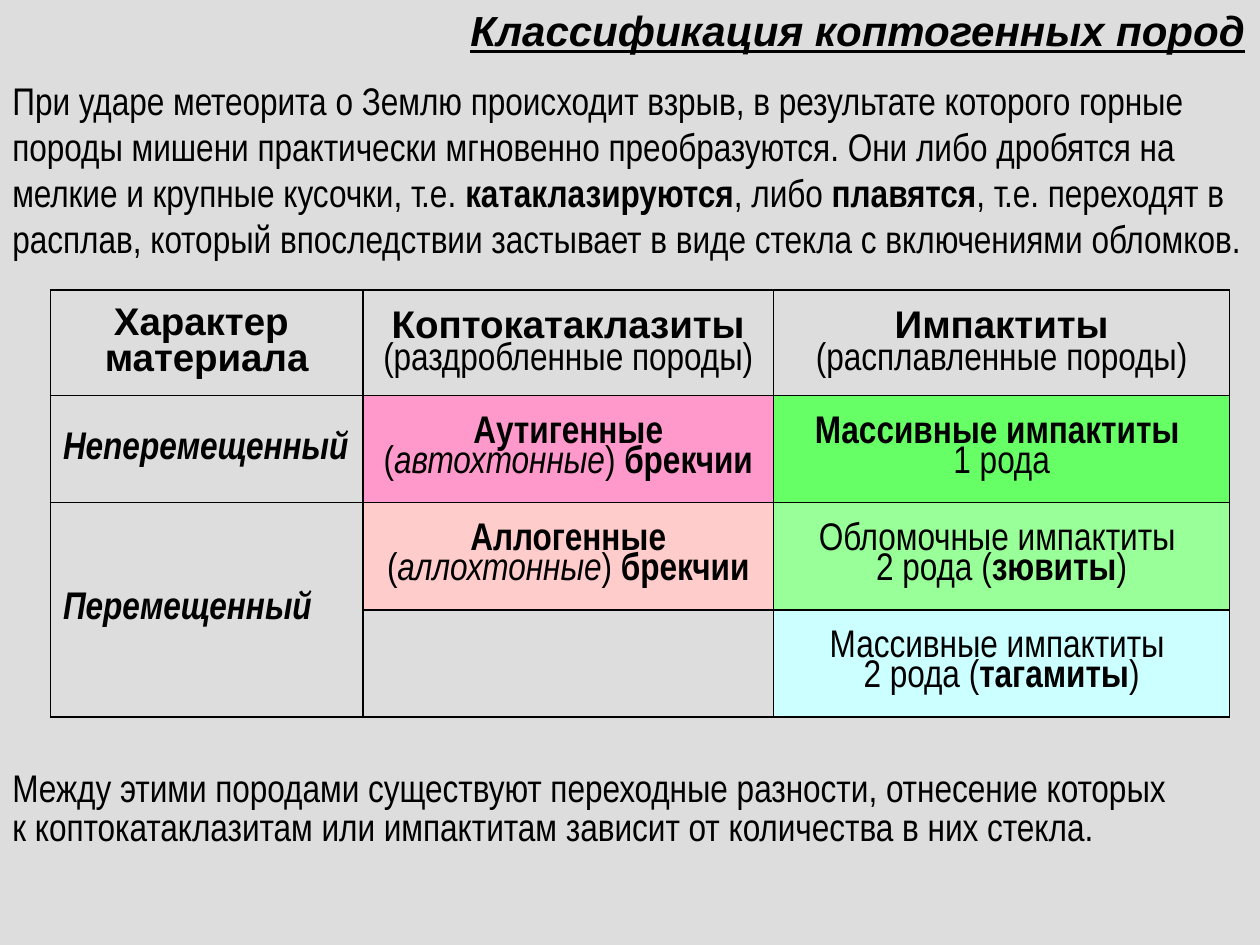
import pptx
import pptx.util
import pptx.dml.color
import pptx.enum.text
import pptx.oxml
import pptx.oxml.ns
from dataclasses import dataclass

Inches, Pt = pptx.util.Inches, pptx.util.Pt
Align = pptx.enum.text.PP_ALIGN
Anchor = pptx.enum.text.MSO_ANCHOR


@dataclass
class Theme:
    back: str = "DDDDDD"
    ink: str = "000000"
    pink: str = "FF99CC"
    rose: str = "FFCCCC"
    green: str = "66FF66"
    mint: str = "99FF99"
    aqua: str = "CCFFFF"
    head: str = "Arial"
    body: str = "Arial Narrow"
    title: int = 24
    size: int = 22
    tight: float = 0.85
    rule: int = 1


def color(code):
    return pptx.dml.color.RGBColor.from_string(code)


class Page:
    def __init__(self, deck, theme):
        self.theme = theme
        self.slide = deck.slides.add_slide(deck.slide_layouts[6])
        fill = self.slide.background.fill
        fill.solid()
        fill.fore_color.rgb = color(theme.back)

    def words(self, frame, paras, size, align=Align.LEFT, tight=None):
        """Each run is (text, marks): b bold, i italic, u underline, h heading font."""
        for i, runs in enumerate(paras):
            para = frame.add_paragraph() if i else frame.paragraphs[0]
            para.alignment = align
            if tight:
                para.line_spacing = tight
            for text, marks in runs:
                run = para.add_run()
                run.text = text
                font = run.font
                font.name = self.theme.head if "h" in marks else self.theme.body
                font.size = Pt(size)
                font.bold = "b" in marks
                font.italic = "i" in marks
                font.underline = "u" in marks
                font.color.rgb = color(self.theme.ink)

    def text(self, box, paras, size, align=Align.LEFT, tight=None):
        shape = self.slide.shapes.add_textbox(*map(Inches, box))
        frame = shape.text_frame
        frame.word_wrap = True
        self.words(frame, paras, size, align, tight)
        return frame

    def border(self, cell):
        props = cell._tc.get_or_add_tcPr()
        for side in "LRTB":
            props.append(pptx.oxml.parse_xml(
                f'<a:ln{side} {pptx.oxml.ns.nsdecls("a")} w="{Pt(self.theme.rule)}">'
                f'<a:solidFill><a:srgbClr val="{self.theme.ink}"/></a:solidFill>'
                f'</a:ln{side}>'))

    def table(self, left, top, wides, highs, rows):
        grid = self.slide.shapes.add_table(
            len(highs), len(wides), Inches(left), Inches(top),
            Inches(sum(wides)), Inches(sum(highs))).table
        grid.first_row = grid.horz_banding = False
        for col, wide in zip(grid.columns, wides):
            col.width = Inches(wide)
        for row, high, items in zip(grid.rows, highs, rows):
            row.height = Inches(high)
            for n, (cell, (paras, tint)) in enumerate(zip(row.cells, items)):
                self.border(cell)
                if tint:
                    cell.fill.solid()
                    cell.fill.fore_color.rgb = color(tint)
                else:
                    cell.fill.background()
                cell.vertical_anchor = Anchor.MIDDLE
                label = n == 0 and len(paras) == 1
                self.words(cell.text_frame, paras, self.theme.size,
                           Align.LEFT if label else Align.CENTER,
                           None if label else self.theme.tight)
        return grid


def breccia(kind, origin):
    return [[(kind, "b"), (" (", ""), (origin, "i"), (") ", ""), ("брекчии", "b")]]


def second(kind, name):
    return [[(kind + " импактиты ", "")],
            [("2 рода (", ""), (name, "b"), (")", "")]]


def main():
    deck = pptx.Presentation()
    deck.slide_width, deck.slide_height = Inches(10), Inches(7.5)
    theme = Theme()
    page = Page(deck, theme)

    # Title
    frame = page.text((0, 0.09, 9.98, 0.36),
                      [[("Классификация коптогенных пород", "biuh")]],
                      theme.title, Align.RIGHT, theme.tight)
    frame.margin_top = frame.margin_bottom = Inches(0.01)
    frame.vertical_anchor = Anchor.MIDDLE

    # Classification table
    rows = [
        [([[("Характер ", "bh")], [("материала", "bh")]], None),
         ([[("Коптокатаклазиты", "bh")], [("(раздробленные породы)", "")]], None),
         ([[("Импактиты ", "bh"), ("(расплавленные породы)", "")]], None)],
        [([[("Неперемещенный", "bi")]], None),
         (breccia("Аутигенные", "автохтонные"), theme.pink),
         ([[("Массивные импактиты ", "b")], [("1 рода", "")]], theme.green)],
        [([[("Перемещенный", "bi")]], None),
         (breccia("Аллогенные", "аллохтонные"), theme.rose),
         (second("Обломочные", "зювиты"), theme.mint)],
        [([], None), ([], None),
         (second("Массивные", "тагамиты"), theme.aqua)],
    ]
    grid = page.table(0.4, 2.3, [2.48, 3.26, 3.62], [0.84] + [0.85] * 3, rows)
    grid.cell(2, 0).merge(grid.cell(3, 0))

    # Closing remark
    page.text((0, 6.07, 10, 0.73),
              [[("Между этими породами существуют переходные разности, "
                 "отнесение которых", "")],
               [("к коптокатаклазитам или импактитам зависит от количества "
                 "в них стекла.", "")]],
              theme.size, tight=theme.tight)

    # Introduction
    page.text((0, 0.56, 10, 1.58),
              [[("При ударе метеорита о Землю происходит взрыв, в результате "
                 "которого горные породы мишени практически мгновенно "
                 "преобразуются. Они либо дробятся на мелкие и крупные "
                 "кусочки, т.е. ", ""),
                ("катаклазируются", "b"), (", либо ", ""), ("плавятся", "b"),
                (", т.е. переходят в расплав, который впоследствии застывает "
                 "в виде стекла с включениями обломков.", "")]],
              theme.size)

    deck.save("out.pptx")


if __name__ == "__main__":
    main()
